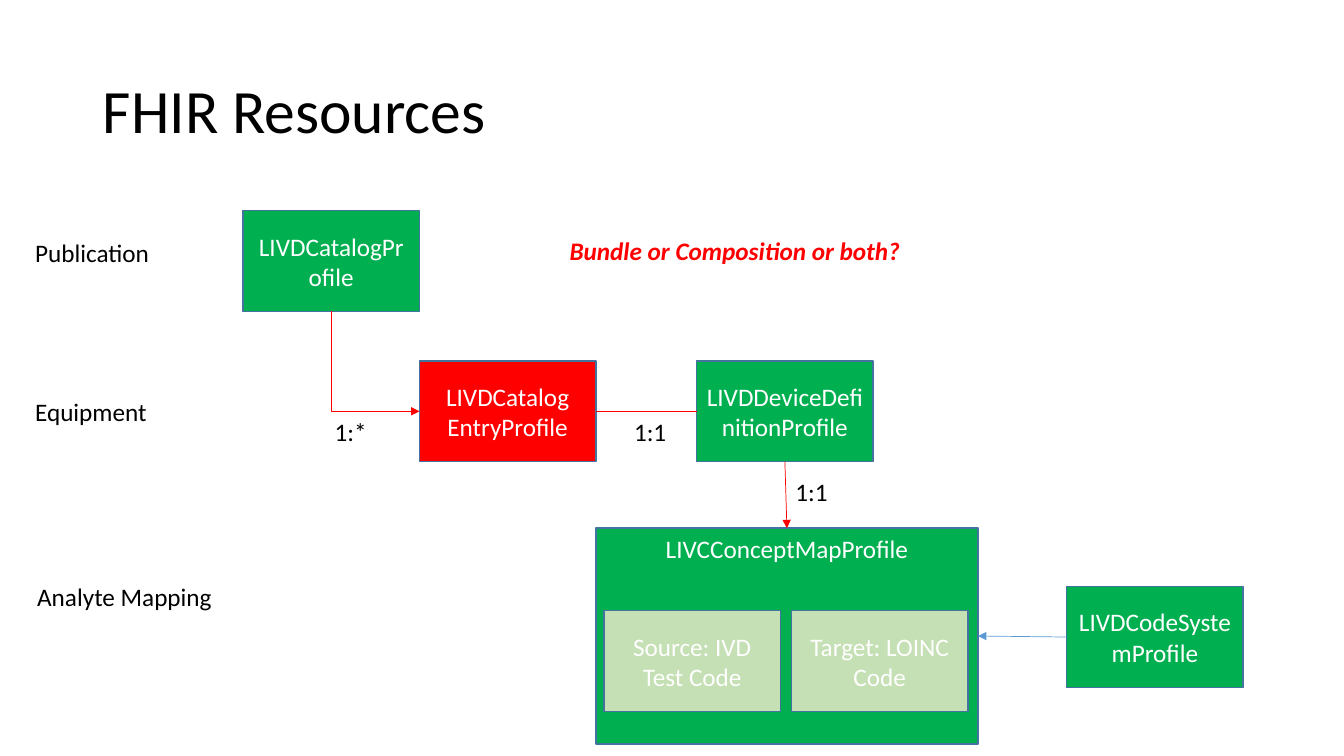
from dataclasses import dataclass

from lxml.etree import SubElement
from pptx import Presentation
from pptx.dml.color import RGBColor
from pptx.enum.shapes import MSO_CONNECTOR as Connector, MSO_SHAPE as Shape
from pptx.enum.text import MSO_ANCHOR as Anchor, MSO_AUTO_SIZE as AutoSize, PP_ALIGN as Align
from pptx.oxml.ns import qn
from pptx.util import Inches, Pt


@dataclass(frozen=True)
class Theme:
    font: str = "Calibri"
    title_size: int = 44
    body_size: int = 18
    black: str = "000000"
    white: str = "FFFFFF"
    green: str = "00B050"
    pale_green: str = "C5E0B4"
    red: str = "FF0000"
    blue: str = "5B9BD5"
    border: str = "43739E"


THEME = Theme()
TOP, LEFT, BOTTOM, RIGHT = range(4)
BOX_WIDTH, BOX_HEIGHT = 1.75, 1
LABEL_HEIGHT = 0.4


def color(value):
    return RGBColor.from_string(value)


def write(shape, text, size, ink, align=Align.LEFT, emphasis=False):
    paragraph = shape.text_frame.paragraphs[0]
    paragraph.text = text
    paragraph.alignment = align
    for run in paragraph.runs:
        font = run.font
        font.name, font.size = THEME.font, Pt(size)
        font.color.rgb = color(ink)
        if emphasis:
            font.bold = font.italic = True
    return paragraph


def add_box(slide, text, left, top, fill, width=BOX_WIDTH, height=BOX_HEIGHT,
            anchor=Anchor.MIDDLE):
    box = slide.shapes.add_shape(Shape.RECTANGLE, Inches(left), Inches(top),
                                 Inches(width), Inches(height))
    box.shadow.inherit = False
    box.fill.solid()
    box.fill.fore_color.rgb = color(fill)
    box.line.color.rgb = color(THEME.border)
    box.line.width = Pt(1)
    box.text_frame.word_wrap = True
    box.text_frame.vertical_anchor = anchor
    write(box, text, THEME.body_size, THEME.white, Align.CENTER)
    return box


def add_label(slide, text, left, top, width, ink=THEME.black, emphasis=False):
    label = slide.shapes.add_textbox(Inches(left), Inches(top),
                                     Inches(width), Inches(LABEL_HEIGHT))
    label.text_frame.word_wrap = False
    label.text_frame.auto_size = AutoSize.SHAPE_TO_FIT_TEXT
    write(label, text, THEME.body_size, ink, emphasis=emphasis)


def join(slide, start, start_side, end, end_side, ink, arrow=True, kind=Connector.STRAIGHT):
    connector = slide.shapes.add_connector(kind, 0, 0, 0, 0)
    connector.begin_connect(start, start_side)
    connector.end_connect(end, end_side)
    connector.line.color.rgb = color(ink)
    connector.line.width = Pt(0.5)
    properties = connector._element.spPr
    if arrow:
        SubElement(properties.find(qn("a:ln")), qn("a:tailEnd"), type="triangle")
    SubElement(properties, qn("a:effectLst"))
    return connector


def join_down_then_right(slide, start, end, ink):
    """Single-bend arrow: a turned bentConnector2 about the same centre."""
    connector = join(slide, start, BOTTOM, end, LEFT, ink, kind=Connector.ELBOW)
    across, down = connector.width, connector.height
    connector.left += (across - down) // 2
    connector.top += (down - across) // 2
    connector.width, connector.height = down, across
    properties = connector._element.spPr
    properties.find(qn("a:prstGeom")).set("prst", "bentConnector2")
    transform = properties.find(qn("a:xfrm"))
    transform.set("rot", str(270 * 60000))
    transform.set("flipH", "1")


def draw_title(slide, left, top, width, height):
    title = slide.shapes.title
    title.left, title.top = Inches(left), Inches(top)
    title.width, title.height = Inches(width), Inches(height)
    title.text_frame.vertical_anchor = Anchor.MIDDLE
    paragraph = write(title, "FHIR Resources", THEME.title_size, THEME.black)
    paragraph.line_spacing = 0.9


def draw_publication(slide, left, top):
    add_label(slide, "Publication", left, top + 0.22, 1.35)
    add_label(slide, "Bundle or Composition or both?", left + 5.3, top + 0.2, 3.55,
              THEME.red, emphasis=True)
    return add_box(slide, "LIVDCatalogProfile", left + 2.16, top, THEME.green)


def draw_equipment(slide, left, top, catalog):
    middle = top + BOX_HEIGHT / 2
    add_label(slide, "Equipment", left, top + 0.3, 1.32)
    entry = add_box(slide, "LIVDCatalog\nEntryProfile", left + 3.91, top, THEME.red)
    device = add_box(slide, "LIVDDeviceDefinitionProfile", left + 6.66, top, THEME.green)
    join(slide, entry, RIGHT, device, LEFT, THEME.red, arrow=False)
    join_down_then_right(slide, catalog, entry, THEME.red)
    add_label(slide, "1:*", left + 2.97, middle, 0.52)
    add_label(slide, "1:1", left + 5.94, middle, 0.53)
    return device


def draw_concept_map(slide, left, top, width, height):
    concept_map = add_box(slide, "LIVCConceptMapProfile", left, top, THEME.green,
                          width, height, Anchor.TOP)
    for column, text in enumerate(("Source: IVD Test Code", "Target: LOINC Code")):
        add_box(slide, text, left + 0.08 + column * 1.86, top + 0.82, THEME.pale_green)
    return concept_map


def draw_analyte_mapping(slide, left, top, device):
    add_label(slide, "Analyte Mapping", left + 0.02, top + 0.48, 1.95)
    concept_map = draw_concept_map(slide, left + 5.66, top, 3.79, 2.14)
    code_system = add_box(slide, "LIVDCodeSystemProfile", left + 10.33, top + 0.58,
                          THEME.green)
    join(slide, device, BOTTOM, concept_map, TOP, THEME.red)
    add_label(slide, "1:1", left + 7.54, top - 0.56, 0.53)
    join(slide, code_system, LEFT, concept_map, RIGHT, THEME.blue)


def main():
    presentation = Presentation()
    presentation.slide_width, presentation.slide_height = Inches(13.33), Inches(7.5)
    title_only = presentation.slide_layouts.get_by_name("Title Only")
    slide = presentation.slides.add_slide(title_only)

    # Title, then one row per level of the model
    draw_title(slide, 0.92, 0.4, 11.5, 1.45)
    row_left = 0.25
    catalog = draw_publication(slide, row_left, 2.09)
    device = draw_equipment(slide, row_left, 3.58, catalog)
    draw_analyte_mapping(slide, row_left, 5.24, device)

    presentation.save("out.pptx")


if __name__ == "__main__":
    main()
